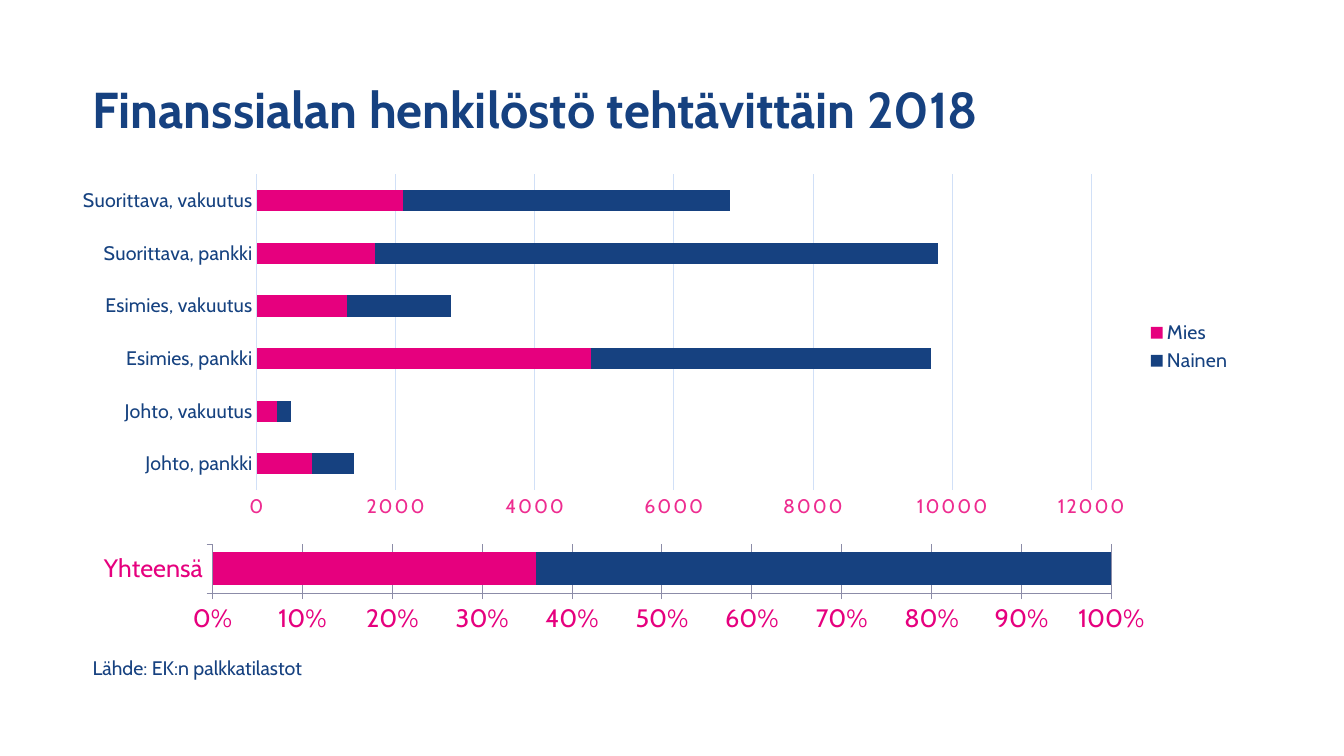
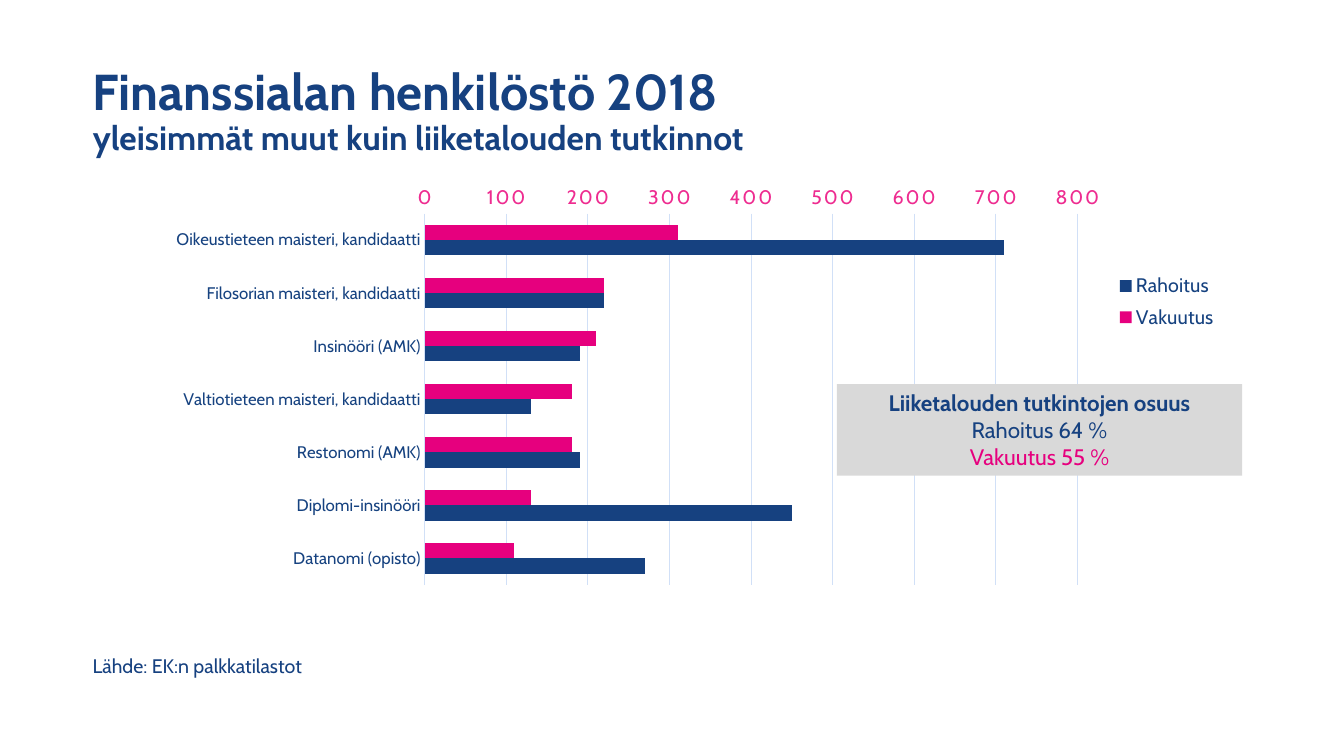
import pptx
import pptx.chart.data
import pptx.dml.color
import pptx.enum.chart
import pptx.enum.shapes
import pptx.enum.text
import pptx.oxml
import pptx.oxml.ns
import pptx.util
from dataclasses import dataclass

Inches = pptx.util.Inches
Pt = pptx.util.Pt
qn = pptx.oxml.ns.qn
ChartType = pptx.enum.chart.XL_CHART_TYPE
TickMark = pptx.enum.chart.XL_TICK_MARK


@dataclass(frozen=True)
class Theme:
    font: str = "Cabin"
    navy: str = "164180"
    label_navy: str = "164280"
    magenta: str = "E6007E"
    axis_pink: str = "EE2C90"
    grid_blue: str = "D1E0F7"
    axis_gray: str = "8C8CA8"
    panel_gray: str = "D9D9D9"
    title_size: int = 36
    subtitle_size: int = 24
    total_size: int = 18
    panel_size: int = 16
    body_size: int = 14
    small_size: int = 12
    left: float = 0.82
    width: float = 11.5


THEME = Theme()
SOURCE = "Lähde: EK:n palkkatilastot"


# Text helpers
def rgb(color):
    return pptx.dml.color.RGBColor.from_string(color)


def set_font(font, size, color, bold=False):
    font.name = THEME.font
    font.size = Pt(size)
    font.bold = bold
    font.color.rgb = rgb(color)


def add_run(paragraph, text, size, color, bold=False):
    run = paragraph.add_run()
    run.text = text
    set_font(run.font, size, color, bold)


def place(shape, box):
    shape.left, shape.top, shape.width, shape.height = map(Inches, box)


# Parts shared by the slides
def add_title(slide, title, subtitle=None):
    shape = slide.shapes.title
    place(shape, (THEME.left, 0.39, THEME.width, 1.45))
    frame = shape.text_frame
    frame.word_wrap = True
    frame.vertical_anchor = pptx.enum.text.MSO_ANCHOR.MIDDLE
    paragraph = frame.paragraphs[0]
    paragraph.alignment = pptx.enum.text.PP_ALIGN.LEFT
    paragraph.line_spacing = 0.9
    add_run(paragraph, title, THEME.title_size, THEME.navy, True)
    if subtitle:
        paragraph.add_line_break()
        add_run(paragraph, subtitle, THEME.subtitle_size, THEME.navy, True)


def add_source(slide, top):
    box = (THEME.left, top, 2.67, 0.34)
    shape = slide.shapes.add_textbox(*map(Inches, box))
    shape.text_frame.word_wrap = False
    shape.text_frame.auto_size = pptx.enum.text.MSO_AUTO_SIZE.SHAPE_TO_FIT_TEXT
    add_run(shape.text_frame.paragraphs[0], SOURCE, THEME.body_size, THEME.navy)


# Chart helpers
def manual_layout(box, inner=False):
    target = '<c:layoutTarget val="inner"/>' if inner else ""
    modes = '<c:xMode val="edge"/><c:yMode val="edge"/>'
    sizes = "".join(f'<c:{tag} val="{value}"/>' for tag, value in zip("xywh", box))
    return pptx.oxml.parse_xml(
        f'<c:layout {pptx.oxml.ns.nsdecls("c")}><c:manualLayout>'
        f"{target}{modes}{sizes}</c:manualLayout></c:layout>")


def remove_layout(element):
    for layout in element.findall(qn("c:layout")):
        element.remove(layout)


def set_line(line, color):
    line.color.rgb = rgb(color)
    line.width = Pt(0.75)


def add_bar_chart(slide, box, kind, categories, series, gap, plot_box, size):
    """Add a bar chart; series maps each name to its values and colour."""
    data = pptx.chart.data.CategoryChartData()
    data.categories = categories
    for name, (values, _) in series.items():
        data.add_series(name, values)
    chart = slide.shapes.add_chart(kind, *map(Inches, box), data).chart
    chart.has_title = False
    chart.has_legend = False
    set_font(chart.font, size, THEME.label_navy)

    plot = chart.plots[0]
    plot.vary_by_categories = False
    plot.gap_width = gap
    if kind != ChartType.BAR_CLUSTERED:
        plot.overlap = 100
    for bars, (_, color) in zip(plot.series, series.values()):
        bars.invert_if_negative = False
        bars.format.fill.solid()
        bars.format.fill.fore_color.rgb = rgb(color)

    area = chart._chartSpace.chart.plotArea
    remove_layout(area)
    area.insert(0, manual_layout(plot_box, inner=True))
    return chart


def style_light_axes(chart, category_size):
    for axis in (chart.category_axis, chart.value_axis):
        axis.major_tick_mark = axis.minor_tick_mark = TickMark.NONE
    set_font(chart.category_axis.tick_labels.font, category_size, THEME.label_navy)
    set_line(chart.category_axis.format.line, THEME.grid_blue)

    values = chart.value_axis
    set_font(values.tick_labels.font, THEME.body_size, THEME.axis_pink)
    for properties in values._element.iter(qn("a:defRPr")):
        properties.set("spc", "120")
    values.tick_labels.number_format = "General"
    values.tick_labels.number_format_is_linked = False
    values.format.line.fill.background()
    values.has_major_gridlines = True
    set_line(values.major_gridlines.format.line, THEME.grid_blue)


def style_percent_axes(chart):
    for axis in (chart.category_axis, chart.value_axis):
        axis.major_tick_mark = TickMark.OUTSIDE
        axis.minor_tick_mark = TickMark.NONE
        set_font(axis.tick_labels.font, THEME.total_size, THEME.magenta)
        set_line(axis.format.line, THEME.axis_gray)
    values = chart.value_axis
    values.major_unit = 0.1
    values.tick_labels.number_format = "0%"
    values.tick_labels.number_format_is_linked = False
    values.has_major_gridlines = True
    set_line(values.major_gridlines.format.line, THEME.axis_gray)


def add_legend(chart, box=None):
    chart.has_legend = True
    legend = chart.legend
    legend.position = pptx.enum.chart.XL_LEGEND_POSITION.RIGHT
    legend.include_in_layout = False
    set_font(legend.font, THEME.body_size, THEME.label_navy)
    if box:
        remove_layout(legend._element)
        legend._element.find(qn("c:legendPos")).addnext(manual_layout(box))


# Slide 1 regions
def add_roles_chart(slide, box):
    categories = ["Johto, pankki", "Johto, vakuutus", "Esimies, pankki",
                  "Esimies, vakuutus", "Suorittava, pankki", "Suorittava, vakuutus"]
    series = {"Mies": ([800, 300, 4800, 1300, 1700, 2100], THEME.magenta),
              "Nainen": ([600, 200, 4900, 1500, 8100, 4700], THEME.navy)}
    chart = add_bar_chart(slide, box, ChartType.BAR_STACKED, categories, series,
                          150, (0.15, 0.02, 0.72, 0.88), THEME.body_size)
    style_light_axes(chart, THEME.body_size)
    chart.value_axis.minimum_scale = 0
    chart.value_axis.maximum_scale = 12000
    chart.value_axis.major_unit = 2000
    add_legend(chart)


def add_total_chart(slide, box):
    series = {"Mies": ([36], THEME.magenta), "Nainen": ([64], THEME.navy)}
    chart = add_bar_chart(slide, box, ChartType.BAR_STACKED_100, ["Yhteensä"], series,
                          50, (0.12, 0.02, 0.83, 0.53), THEME.total_size)
    style_percent_axes(chart)


# Slide 2 regions
def add_degrees_chart(slide, box):
    categories = ["Oikeustieteen maisteri, kandidaatti",
                  "Filosorian maisteri, kandidaatti", "Insinööri (AMK)",
                  "Valtiotieteen maisteri, kandidaatti", "Restonomi (AMK)",
                  "Diplomi-insinööri", "Datanomi (opisto)"]
    series = {"Vakuutus": ([310, 220, 210, 180, 180, 130, 110], THEME.magenta),
              "Rahoitus": ([710, 220, 190, 130, 190, 450, 270], THEME.navy)}
    chart = add_bar_chart(slide, box, ChartType.BAR_CLUSTERED, categories, series,
                          150, (0.295, 0.107, 0.563, 0.857), THEME.body_size)
    style_light_axes(chart, THEME.small_size)
    chart.category_axis.reverse_order = True
    chart.value_axis.minimum_scale = 0
    chart.value_axis.maximum_scale = 800
    chart.value_axis.major_unit = 100
    add_legend(chart, (0.88, 0.23, 0.11, 0.16))


def add_share_panel(slide, box):
    panel = slide.shapes.add_shape(
        pptx.enum.shapes.MSO_SHAPE.RECTANGLE, *map(Inches, box))
    panel.shadow.inherit = False
    panel.fill.solid()
    panel.fill.fore_color.rgb = rgb(THEME.panel_gray)
    panel.line.fill.background()
    frame = panel.text_frame
    frame.word_wrap = True
    frame.vertical_anchor = pptx.enum.text.MSO_ANCHOR.TOP
    frame.auto_size = pptx.enum.text.MSO_AUTO_SIZE.SHAPE_TO_FIT_TEXT
    lines = [("Liiketalouden tutkintojen osuus", THEME.navy, True),
             ("Rahoitus 64 %", THEME.navy, False),
             ("Vakuutus 55 %", THEME.magenta, False)]
    for index, (text, color, bold) in enumerate(lines):
        paragraph = frame.add_paragraph() if index else frame.paragraphs[0]
        paragraph.alignment = pptx.enum.text.PP_ALIGN.CENTER
        add_run(paragraph, text, THEME.panel_size, color, bold)


# Slides
def build_roles_slide(slide):
    add_title(slide, "Finanssialan henkilöstö tehtävittäin 2018")
    add_roles_chart(slide, (THEME.left, 1.66, THEME.width, 3.56))
    add_total_chart(slide, (THEME.left, 5.38, 10.74, 0.92))
    add_source(slide, 6.46)


def build_degrees_slide(slide):
    add_title(slide, "Finanssialan henkilöstö 2018",
              "yleisimmät muut kuin liiketalouden tutkinnot")
    add_degrees_chart(slide, (THEME.left, 1.66, THEME.width, 4.3))
    add_source(slide, 6.44)
    add_share_panel(slide, (8.3, 3.81, 4.02, 0.91))


def main():
    presentation = pptx.Presentation()
    presentation.slide_width = Inches(13.33)
    presentation.slide_height = Inches(7.5)
    title_only = presentation.slide_layouts[5]
    for build in (build_roles_slide, build_degrees_slide):
        build(presentation.slides.add_slide(title_only))
    presentation.save("out.pptx")


if __name__ == "__main__":
    main()
